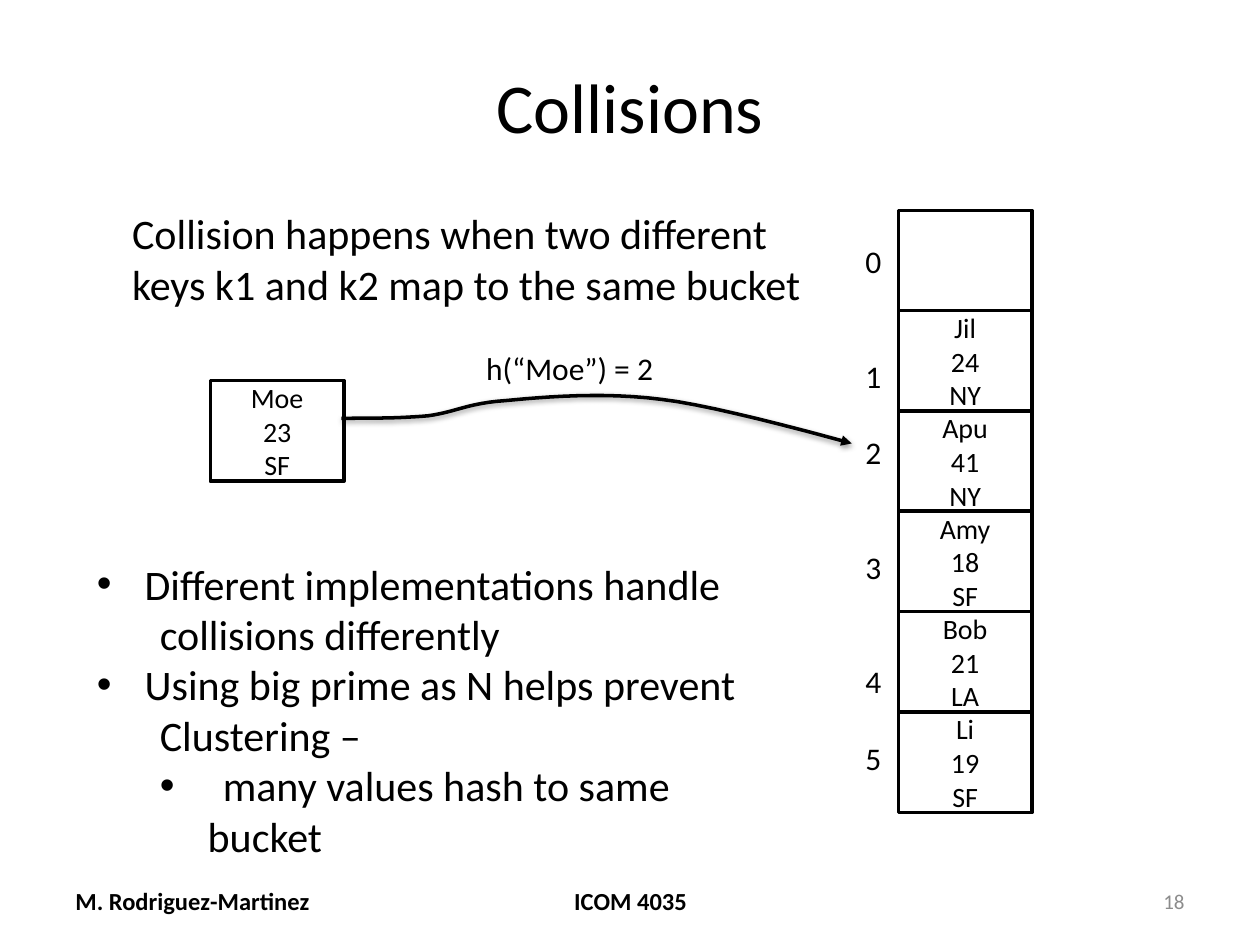
from lxml import etree
from pptx import Presentation, util as u
from pptx.dml.color import RGBColor
from pptx.enum import shapes, text
from pptx.oxml import ns

COLORS = {"ink": "000000", "paper": "FFFFFF", "muted": "8C8C8C"}
LEFT, CENTER, RIGHT = text.PP_ALIGN.LEFT, text.PP_ALIGN.CENTER, text.PP_ALIGN.RIGHT
TOP, MIDDLE = text.MSO_ANCHOR.TOP, text.MSO_ANCHOR.MIDDLE

deck = Presentation()
deck.slide_width, deck.slide_height = u.Inches(10), u.Inches(7.5)
slide = deck.slides.add_slide(deck.slide_layouts[6])


def write(part, lines, size, align=LEFT, anchor=TOP, wrap=True, bold=False, color="ink"):
    frame = part.text_frame
    for name, value in {"word_wrap": wrap, "vertical_anchor": anchor}.items():
        setattr(frame, name, value)
    for i, line in enumerate(lines):
        paragraph = frame.paragraphs[0] if i == 0 else frame.add_paragraph()
        paragraph.alignment = align
        run = paragraph.add_run()
        run.text = line
        for name, value in {"name": "Calibri", "size": u.Pt(size), "bold": bold}.items():
            setattr(run.font, name, value)
        run.font.color.rgb = RGBColor.from_string(COLORS[color])
    return frame.paragraphs


def add_record(left, top, lines):
    box = slide.shapes.add_shape(
        shapes.MSO_SHAPE.RECTANGLE, *map(u.Inches, (left, top, 1.06, 0.8)))
    box.shadow.inherit = False
    box.fill.solid()
    box.fill.fore_color.rgb = RGBColor.from_string(COLORS["paper"])
    box.line.color.rgb = RGBColor.from_string(COLORS["ink"])
    box.line.width = u.Pt(2)
    write(box, lines, 16, CENTER, MIDDLE)


labels = [
    ((0.5, 0.3, 9, 1.07), ["Collisions"],
     {"size": 40, "align": CENTER, "anchor": MIDDLE}),
    ((0.5, 6.95, 2.33, 0.4), ["M. Rodriguez-Martinez"],
     {"size": 14, "anchor": MIDDLE, "bold": True}),
    ((3.42, 6.95, 3.17, 0.4), ["ICOM 4035"],
     {"size": 14, "align": CENTER, "anchor": MIDDLE, "bold": True}),
    ((7.17, 6.95, 2.33, 0.4), ["18"],
     {"size": 12, "align": RIGHT, "anchor": MIDDLE, "color": "muted"}),
    ((3.76, 2.72, 1.54, 0.4), ["h(“Moe”) = 2"], {"size": 18, "wrap": False}),
    ((0.95, 1.6, 5.61, 0.91),
     ["Collision happens when two different", "keys k1 and k2 map to the same bucket"],
     {"size": 24, "wrap": False}),
]
for place, lines, style in labels:
    write(slide.shapes.add_textbox(*map(u.Inches, place)), lines, **style)

add_record(1.67, 3.02, ["Moe", "23", "SF"])
buckets = [[], ["Jil", "24", "NY"], ["Apu", "41", "NY"],
           ["Amy", "18", "SF"], ["Bob", "21", "LA"], ["Li", "19", "SF"]]
for row, record in enumerate(buckets):
    add_record(7.13, 1.67 + row * 0.796, record)

index_column = slide.shapes.add_textbox(*map(u.Inches, (6.77, 1.87, 0.33, 4.34)))
indexes = write(index_column, [str(i) for i in range(len(buckets))], 18, wrap=False)
for index, skipped_lines in zip(indexes, (0, 2, 1, 2, 2, 1)):
    index.space_before = u.Pt(22 * skipped_lines)

curves = [
    ((2.71, 3.32), (2.95, 3.32), (3.18, 3.32), (3.4, 3.3)),
    ((3.4, 3.3), (3.62, 3.27), (3.71, 3.2), (4.01, 3.18)),
    ((4.01, 3.18), (4.32, 3.15), (4.79, 3.11), (5.25, 3.17)),
    ((5.25, 3.17), (5.7, 3.22), (6.76, 3.52), (6.76, 3.52)),
]
STEPS = 12
route = []
for curve in curves:
    for step in range(1, STEPS + 1):
        t = step / STEPS
        weights = ((1 - t) ** 3, 3 * t * (1 - t) ** 2, 3 * t ** 2 * (1 - t), t ** 3)
        route.append([u.Inches(sum(w * p[axis] for w, p in zip(weights, curve)))
                      for axis in (0, 1)])
builder = slide.shapes.build_freeform(u.Inches(2.71), u.Inches(3.32))
builder.add_line_segments(route, close=False)
hash_arrow = builder.convert_to_shape()
hash_arrow.fill.background()
hash_arrow.line.color.rgb = RGBColor.from_string(COLORS["ink"])
hash_arrow.line.width = u.Pt(2)
hash_arrow.shadow.inherit = False
outline = hash_arrow.line._get_or_add_ln()
etree.SubElement(outline, ns.qn("a:tailEnd"), type="triangle")
effects = hash_arrow._element.spPr.find(ns.qn("a:effectLst"))
shadow = etree.SubElement(effects, ns.qn("a:outerShdw"), blurRad="40000",
                          dist="20000", dir="5400000", rotWithShape="0")
shade = etree.SubElement(shadow, ns.qn("a:srgbClr"), val=COLORS["ink"])
etree.SubElement(shade, ns.qn("a:alpha"), val="38000")

notes = [
    ("Different implementations handle", 0.38),
    ("\tcollisions differently", None),
    ("Using big prime as N helps prevent", 0.38),
    ("\tClustering –", None),
    ("\tmany values hash to same bucket", 0.88),
]
remarks = slide.shapes.add_textbox(*map(u.Inches, (0.67, 4.38, 5.69, 2.12)))
for paragraph, (_, margin) in zip(write(remarks, [n[0] for n in notes], 24), notes):
    if margin:
        properties = paragraph._p.get_or_add_pPr()
        properties.set("marL", str(u.Inches(margin)))
        properties.set("indent", str(u.Inches(-0.38)))
        etree.SubElement(properties, ns.qn("a:buFont"), typeface="Arial")
        etree.SubElement(properties, ns.qn("a:buChar"), char="•")

deck.save("out.pptx")
